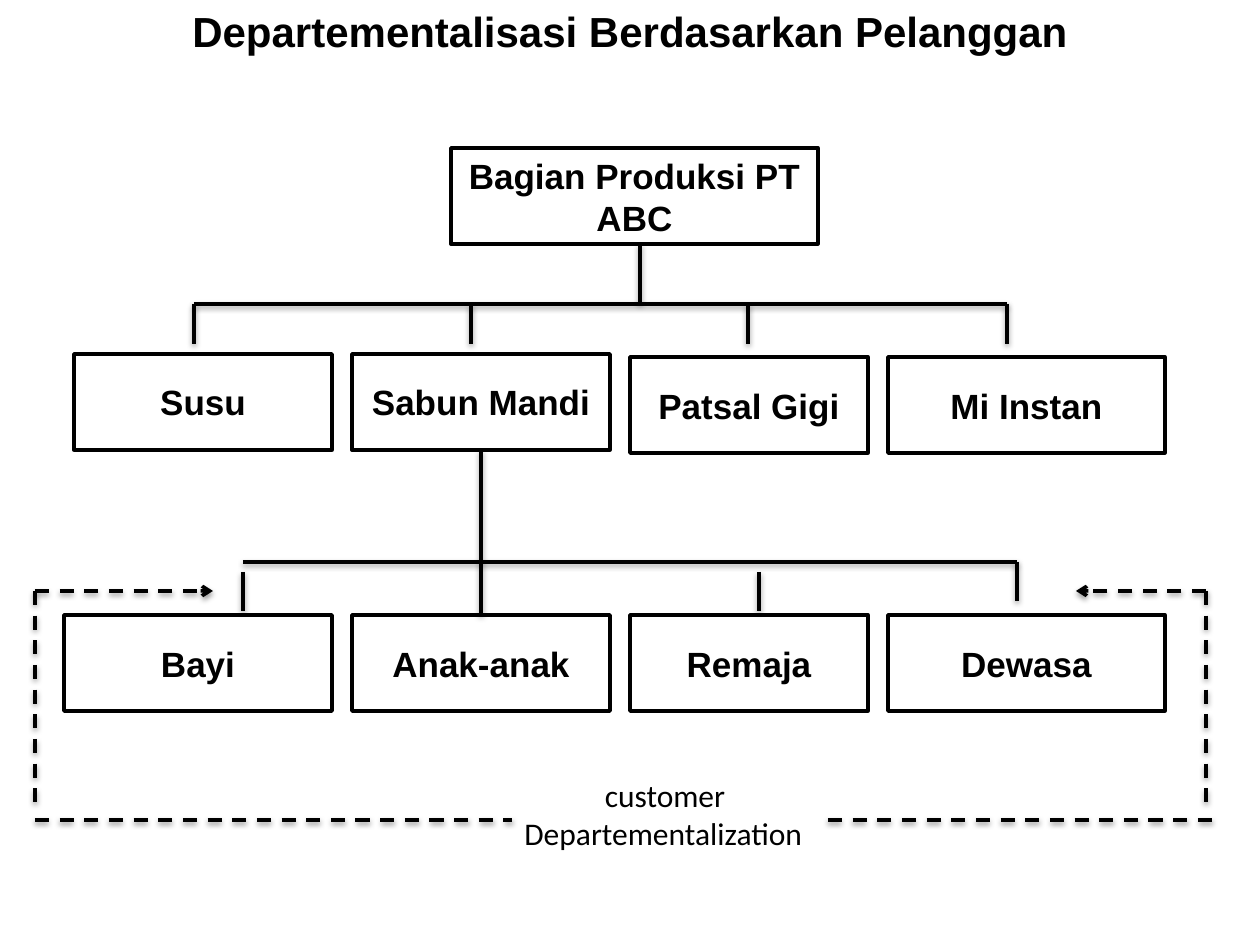
from dataclasses import dataclass

from lxml import etree
from pptx import Presentation
from pptx import util as u
from pptx.dml.color import RGBColor
from pptx.enum import dml, shapes, text
from pptx.oxml import ns

PX = 914400 / 126


def px(n):
    return u.Emu(round(n * PX))


@dataclass(frozen=True)
class Theme:
    ink: RGBColor = RGBColor(0, 0, 0)
    paper: RGBColor = RGBColor(255, 255, 255)
    head_font: str = "Arial"
    note_font: str = "Calibri"
    title: int = 24
    box: int = 20
    note: int = 18
    line: int = 2


def write(p, content, font, size, color, bold=False, align=text.PP_ALIGN.CENTER):
    p.alignment = align
    r = p.add_run()
    r.text = content
    r.font.name = font
    r.font.size = u.Pt(size)
    r.font.bold = bold
    r.font.color.rgb = color


class Chart:
    def __init__(self, slide, theme):
        self.s = slide
        self.t = theme

    def title(self, content, x, y, w, h):
        tf = self.s.shapes.add_textbox(*map(px, (x, y, w, h))).text_frame
        tf.word_wrap = True
        tf.vertical_anchor = text.MSO_ANCHOR.MIDDLE
        write(tf.paragraphs[0], content, self.t.head_font, self.t.title,
              self.t.ink, bold=True)

    def box(self, content, x, y, w, h=96):
        sp = self.s.shapes.add_shape(shapes.MSO_SHAPE.RECTANGLE,
                                     *map(px, (x, y, w, h)))
        sp.shadow.inherit = False
        sp.fill.solid()
        sp.fill.fore_color.rgb = self.t.paper
        sp.line.color.rgb = self.t.ink
        sp.line.width = u.Pt(self.t.line)
        tf = sp.text_frame
        tf.word_wrap = True
        tf.vertical_anchor = text.MSO_ANCHOR.MIDDLE
        write(tf.paragraphs[0], content, self.t.head_font, self.t.box,
              self.t.ink, bold=True)

    def note(self, lines, x, y, w, h):
        tf = self.s.shapes.add_textbox(*map(px, (x, y, w, h))).text_frame
        tf.word_wrap = False
        tf.auto_size = text.MSO_AUTO_SIZE.SHAPE_TO_FIT_TEXT
        for i, (content, align) in enumerate(lines):
            p = tf.add_paragraph() if i else tf.paragraphs[0]
            write(p, content, self.t.note_font, self.t.note, self.t.ink, align=align)

    def line(self, x1, y1, x2, y2, dashed=False, arrow=False):
        c = self.s.shapes.add_connector(shapes.MSO_CONNECTOR.STRAIGHT,
                                        *map(px, (x1, y1, x2, y2)))
        c.line.color.rgb = self.t.ink
        c.line.width = u.Pt(self.t.line)
        if dashed:
            c.line.dash_style = dml.MSO_LINE.DASH
        if arrow:
            etree.SubElement(c.line._get_or_add_ln(), ns.qn("a:tailEnd"), type="arrow")
        self.shadow(c)

    def shadow(self, c):
        effects = etree.SubElement(c._element.spPr, ns.qn("a:effectLst"))
        outer = etree.SubElement(effects, ns.qn("a:outerShdw"),
                                 blurRad=str(u.Pt(3.1)), dist=str(u.Pt(1.6)),
                                 dir="5400000", rotWithShape="0")
        color = etree.SubElement(outer, ns.qn("a:srgbClr"), val=str(self.t.ink))
        etree.SubElement(color, ns.qn("a:alpha"), val="38000")


def main():
    prs = Presentation()
    prs.slide_width, prs.slide_height = px(1260), px(945)
    chart = Chart(prs.slides.add_slide(prs.slide_layouts[6]), Theme())

    chart.title("Departementalisasi Berdasarkan Pelanggan", 0, 6, 1260, 49)
    chart.box("Bagian Produksi PT ABC", 451, 148, 367)

    products = [("Susu", 74, 354, 258), ("Sabun Mandi", 352, 354, 258),
                ("Patsal Gigi", 630, 357, 238), ("Mi Instan", 888, 357, 277)]
    customers = [("Bayi", 64, 268), ("Anak-anak", 352, 258),
                 ("Remaja", 630, 238), ("Dewasa", 888, 277)]
    for name, x, y, w in products:
        chart.box(name, x, y, w)
    for name, x, w in customers:
        chart.box(name, x, 615, w)

    chart.line(640, 244, 640, 304)
    chart.line(194, 304, 1007, 304)
    for x in (194, 471, 748, 1007):
        chart.line(x, 304, x, 344)

    chart.line(481, 450, 481, 615)
    chart.line(243, 562, 1017, 562)
    for x, y in ((243, 572), (759, 572), (1017, 562)):
        chart.line(x, y, x, y + 39)

    chart.note([("customer", text.PP_ALIGN.CENTER),
                ("Departementalization", text.PP_ALIGN.LEFT)], 512, 770, 306, 89)
    for x1, x2 in ((35, 512), (828, 1216)):
        chart.line(x1, 820, x2, 820, dashed=True)
    for edge, tip in ((35, 213), (1206, 1076)):
        chart.line(edge, 591, edge, 810, dashed=True)
        chart.line(edge, 591, tip, 591, dashed=True, arrow=True)

    prs.save("out.pptx")


if __name__ == "__main__":
    main()
